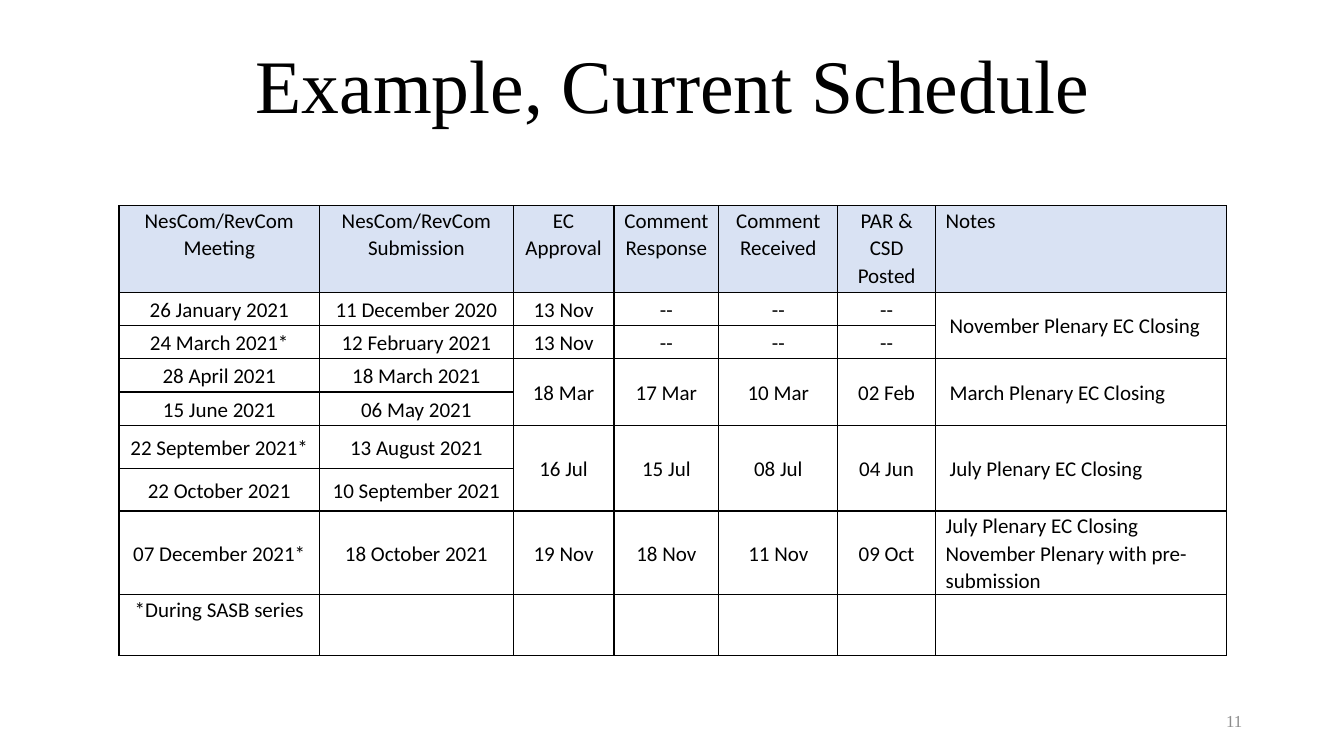
"""Builds the current schedule slide with its table of meeting deadlines."""
from dataclasses import dataclass

from lxml import etree
from pptx import Presentation
from pptx.dml.color import RGBColor
from pptx.enum.text import MSO_ANCHOR, PP_ALIGN
from pptx.oxml.ns import qn
from pptx.util import Inches, Pt

TITLE = "Example, Current Schedule"
PAGE = "11"
HEAD = ["NesCom/RevCom\nMeeting", "NesCom/RevCom Submission", "EC Approval",
        "Comment Response", "Comment Received", "PAR & CSD Posted", "Notes"]
SPAN = None
ROWS = [
    HEAD,
    ["26 January 2021", "11 December 2020", "13 Nov", "--", "--", "--",
     "November Plenary EC Closing"],
    ["24 March 2021*", "12 February 2021", "13 Nov", "--", "--", "--", SPAN],
    ["28 April 2021", "18 March 2021", "18 Mar", "17 Mar", "10 Mar", "02 Feb",
     "March Plenary EC Closing"],
    ["15 June 2021", "06 May 2021"] + [SPAN] * 5,
    ["22 September 2021*", "13 August 2021", "16 Jul", "15 Jul", "08 Jul", "04 Jun",
     "July Plenary EC Closing"],
    ["22 October 2021", "10 September 2021"] + [SPAN] * 5,
    ["07 December 2021*", "18 October 2021", "19 Nov", "18 Nov", "11 Nov", "09 Oct",
     "July Plenary EC Closing\nNovember Plenary with pre-submission"],
    ["*During SASB series"] + [""] * 6,
]
WIDTHS = [1.99, 1.92, 1, 1.04, 1.18, 0.97, 2.89]
HEIGHTS = [0.86, 0.33, 0.33, 0.33, 0.33, 0.43, 0.42, 0.83, 0.6]


@dataclass(frozen=True)
class Theme:
    """Colours, fonts and type sizes."""
    ink: str = "000000"
    head: str = "D9E2F3"
    gray: str = "8C8C8C"
    serif: str = "Times New Roman"
    sans: str = "Calibri"
    title: int = 54
    cell: int = 15
    page: int = 12
    rule: int = 1


LOOK = Theme()


def style(par, face, size, color, align):
    """Sets the font and alignment of a paragraph."""
    par.font.name, par.font.size = face, Pt(size)
    par.font.color.rgb = RGBColor.from_string(color)
    par.alignment = align


def place(shape, left, top, width, height):
    """Moves and sizes a shape, in inches."""
    shape.left, shape.top = Inches(left), Inches(top)
    shape.width, shape.height = Inches(width), Inches(height)


def frame(cell):
    """Draws a thin line on all four sides of a cell."""
    props = cell._tc.get_or_add_tcPr()
    for side in ("lnL", "lnR", "lnT", "lnB"):
        line = etree.SubElement(props, qn("a:" + side), w=str(Pt(LOOK.rule)))
        fill = etree.SubElement(line, qn("a:solidFill"))
        etree.SubElement(fill, qn("a:srgbClr"), val=LOOK.ink)


def fill_cell(cell, words, row, col):
    """Writes and formats one cell of the table."""
    notes = col == len(HEAD) - 1
    wide = notes and row + 1 < len(ROWS) and ROWS[row + 1][col] is SPAN
    side, top, base = (0.14, 0.07, 0.07) if wide else (0.1, 0.01, 0)
    cell.margin_left = cell.margin_right = Inches(side)
    cell.margin_top, cell.margin_bottom = Inches(top), Inches(base)
    edge = row in (0, len(ROWS) - 1)
    cell.vertical_anchor = MSO_ANCHOR.TOP if edge else MSO_ANCHOR.MIDDLE
    frame(cell)
    if row == 0:
        cell.fill.solid()
        cell.fill.fore_color.rgb = RGBColor.from_string(LOOK.head)
    else:
        cell.fill.background()
    cell.text = words or ""
    for par in cell.text_frame.paragraphs:
        style(par, LOOK.sans, LOOK.cell, LOOK.ink,
              PP_ALIGN.LEFT if notes else PP_ALIGN.CENTER)
        par.line_spacing = 1.07


def add_plan(slide):
    """Adds the schedule table."""
    table = slide.shapes.add_table(
        len(ROWS), len(HEAD), Inches(1.18), Inches(2.04),
        Inches(sum(WIDTHS)), Inches(sum(HEIGHTS))).table
    table.horz_banding = False
    for col, width in zip(table.columns, WIDTHS):
        col.width = Inches(width)
    for row, height in zip(table.rows, HEIGHTS):
        row.height = Inches(height)
    for r, line in enumerate(ROWS):
        for c, words in enumerate(line):
            fill_cell(table.cell(r, c), words, r, c)
            if words is SPAN:
                table.cell(r - 1, c).merge(table.cell(r, c))


def main():
    """Builds and saves the slide."""
    deck = Presentation()
    deck.slide_width, deck.slide_height = Inches(13.33), Inches(7.5)
    slide = deck.slides.add_slide(deck.slide_layouts[5])

    title = slide.shapes.title
    place(title, 0.92, 0.32, 11.5, 1.02)
    title.text = TITLE
    title.text_frame.vertical_anchor = MSO_ANCHOR.BOTTOM
    par = title.text_frame.paragraphs[0]
    style(par, LOOK.serif, LOOK.title, LOOK.ink, PP_ALIGN.CENTER)
    par.line_spacing = 0.9

    add_plan(slide)

    page = slide.shapes.add_textbox(0, 0, 0, 0)
    place(page, 9.42, 6.95, 3, 0.4)
    page.text_frame.word_wrap = True
    page.text_frame.vertical_anchor = MSO_ANCHOR.MIDDLE
    page.text_frame.text = PAGE
    par = page.text_frame.paragraphs[0]
    style(par, LOOK.serif, LOOK.page, LOOK.gray, PP_ALIGN.RIGHT)
    par.space_after = Pt(6)

    deck.save("out.pptx")


if __name__ == "__main__":
    main()
